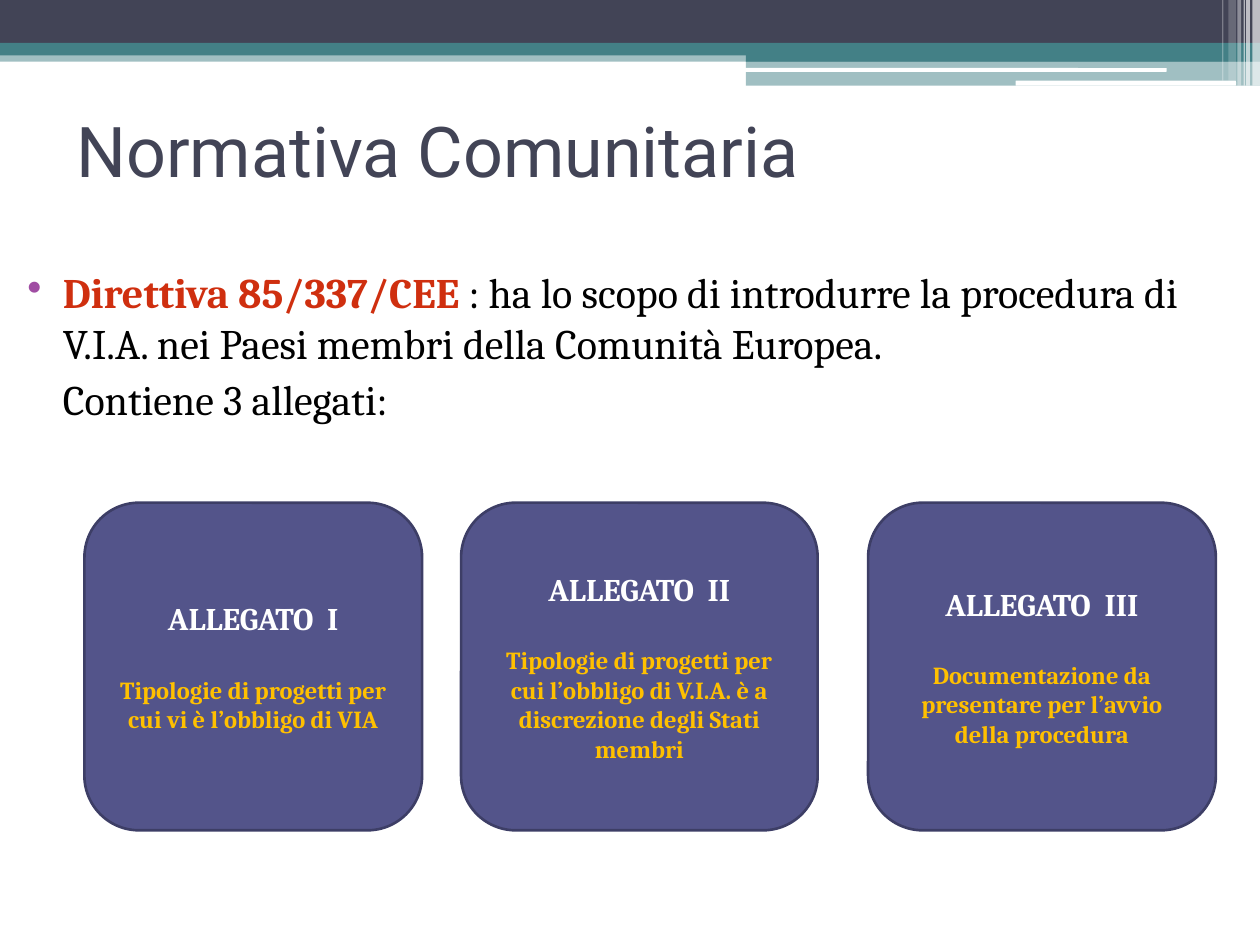
from lxml import etree
from pptx import Presentation
from pptx.dml.color import RGBColor
from pptx.enum import shapes, text
from pptx.oxml.ns import qn
from pptx.util import Inches, Pt

RECT = shapes.MSO_SHAPE.RECTANGLE
ROUND = shapes.MSO_SHAPE.ROUNDED_RECTANGLE
WHITE, TEAL, SLATE = "FFFFFF", "438086", "424456"

BANDS = [
    (0, 0.4, 10, 0.09, TEAL, 50),
    (0, 0, 10, 0.34, SLATE, 100),
    (0, 0.34, 10, 0.1, TEAL, 100),
    (5.92, 0.39, 4.08, 0.1, TEAL, 100),
    (5.92, 0.48, 4.08, 0.2, TEAL, 50),
]
HIGHLIGHTS = [(5.91, 0.54, 3.35, 0.03), (8.06, 0.64, 1.75, 0.04)]
STRIPES = [
    (9.94, 0.06, 0.68, 65),
    (9.89, 0.03, 0.68, 65),
    (9.87, 0.01, 0.68, 60),
    (9.82, 0.03, 0.68, 40),
    (9.75, 0.06, 0.64, 20),
    (9.7, 0.01, 0.64, 30),
]
CARDS = [
    (0.67, 2.68, "ALLEGATO  I", "Tipologie di progetti per cui vi è l’obbligo di VIA"),
    (3.66, 2.83, "ALLEGATO  II",
     "Tipologie di progetti per cui l’obbligo di V.I.A. è a discrezione degli Stati membri"),
    (6.89, 2.76, "ALLEGATO  III", "Documentazione da presentare per l’avvio della procedura"),
]


def rgb(value):
    return RGBColor.from_string(value)


def add_block(s, kind, box, color, opacity=100):
    sp = s.shapes.add_shape(kind, *map(Inches, box))
    sp.shadow.inherit = False
    sp.fill.solid()
    sp.fill.fore_color.rgb = rgb(color)
    sp.line.fill.background()
    if opacity < 100:
        clr = sp.fill._xPr.find(qn("a:solidFill"))[0]
        etree.SubElement(clr, qn("a:alpha")).set("val", str(opacity * 1000))
    return sp


def add_text_box(s, box, anchor):
    tf = s.shapes.add_textbox(*map(Inches, box)).text_frame
    tf.word_wrap = True
    tf.vertical_anchor = anchor
    return tf


def add_run(p, words, color, **formats):
    r = p.add_run()
    r.text = words
    r.font.color.rgb = rgb(color)
    for name, value in formats.items():
        setattr(r.font, name, value)


def set_indent(p, left, first, bullet_color=None):
    pPr = p._p.get_or_add_pPr()
    pPr.set("marL", str(Inches(left)))
    pPr.set("indent", str(Inches(first)))
    if bullet_color:
        clr = etree.SubElement(pPr, qn("a:buClr"))
        etree.SubElement(clr, qn("a:srgbClr")).set("val", bullet_color)
        etree.SubElement(pPr, qn("a:buChar")).set("char", "•")


def add_header(s):
    for *box, color, opacity in BANDS:
        add_block(s, RECT, box, color, opacity)
    for box in HIGHLIGHTS:
        add_block(s, ROUND, box, WHITE)
    for left, width, height, opacity in STRIPES:
        add_block(s, RECT, (left, 0, width, height), WHITE, opacity)


def add_title(s):
    tf = add_text_box(s, (0.51, 0.6, 9, 1.17), text.MSO_ANCHOR.MIDDLE)
    add_run(tf.paragraphs[0], "Normativa Comunitaria", SLATE, size=Pt(40), name="Roboto")


def add_body(s):
    tf = add_text_box(s, (0, 2.07, 10, 1.5), text.MSO_ANCHOR.TOP)
    body = dict(size=Pt(24), name="Cambria")
    p, closing = tf.paragraphs[0], tf.add_paragraph()
    for item in (p, closing):
        item.space_before = Pt(3)
    set_indent(p, 0.4, -0.28, "A04DA3")
    set_indent(closing, 0.4, 0)
    add_run(p, "Direttiva 85/337/CEE ", "CF2F0F", bold=True, **body)
    add_run(p, ": ha lo scopo di introdurre la procedura di V.I.A. nei Paesi membri "
            "della Comunità Europea.", "000000", **body)
    add_run(closing, "Contiene 3 allegati:", "000000", **body)


def add_card(s, left, width, heading, detail):
    sp = add_block(s, ROUND, (left, 3.99, width, 2.6), "53548A")
    sp.line.color.rgb = rgb("3D3E66")
    sp.line.width = Pt(1.5)
    tf = sp.text_frame
    tf.word_wrap = True
    tf.vertical_anchor = text.MSO_ANCHOR.MIDDLE
    p, note = tf.paragraphs[0], tf.add_paragraph()
    note.space_before = Pt(21.5)
    for item, words, color, size in ((p, heading, WHITE, 18), (note, detail, "FFC000", 14)):
        item.alignment = text.PP_ALIGN.CENTER
        add_run(item, words, color, size=Pt(size), name="Cambria", bold=True)


def main():
    prs = Presentation()
    prs.slide_width, prs.slide_height = Inches(10), Inches(7.5)
    s = prs.slides.add_slide(prs.slide_layouts[6])
    add_header(s)
    add_title(s)
    add_body(s)
    for card in CARDS:
        add_card(s, *card)
    prs.save("out.pptx")


if __name__ == "__main__":
    main()
